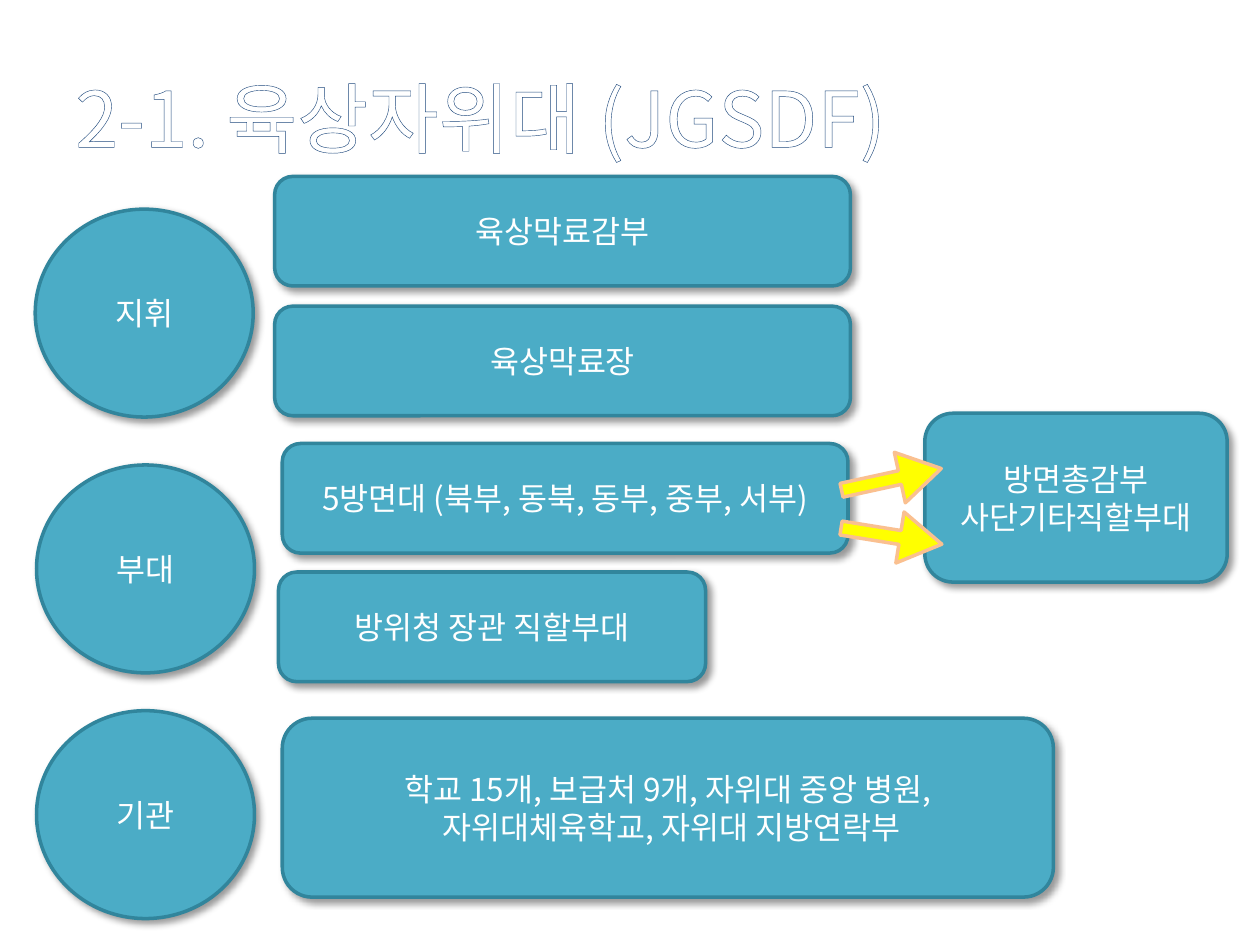
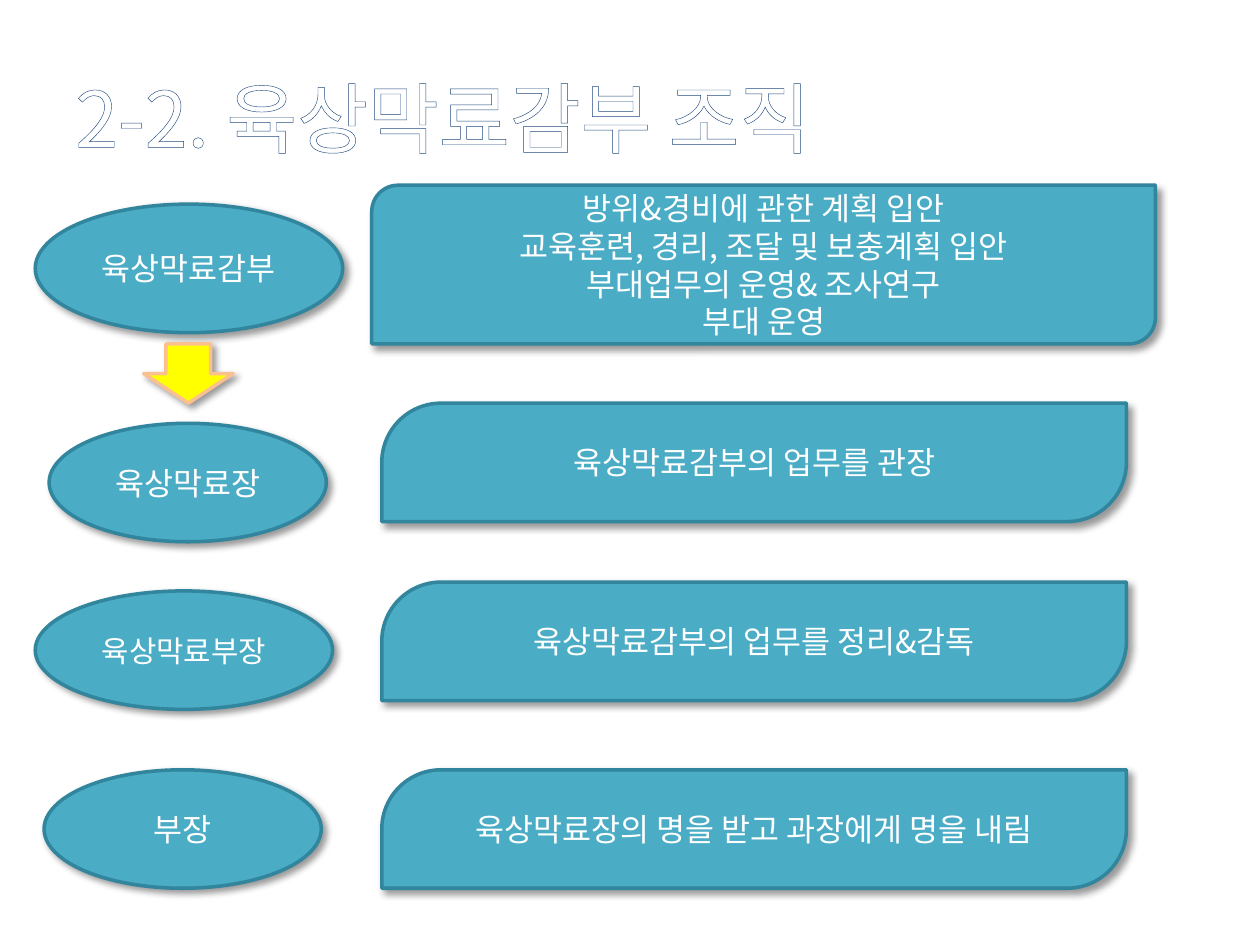
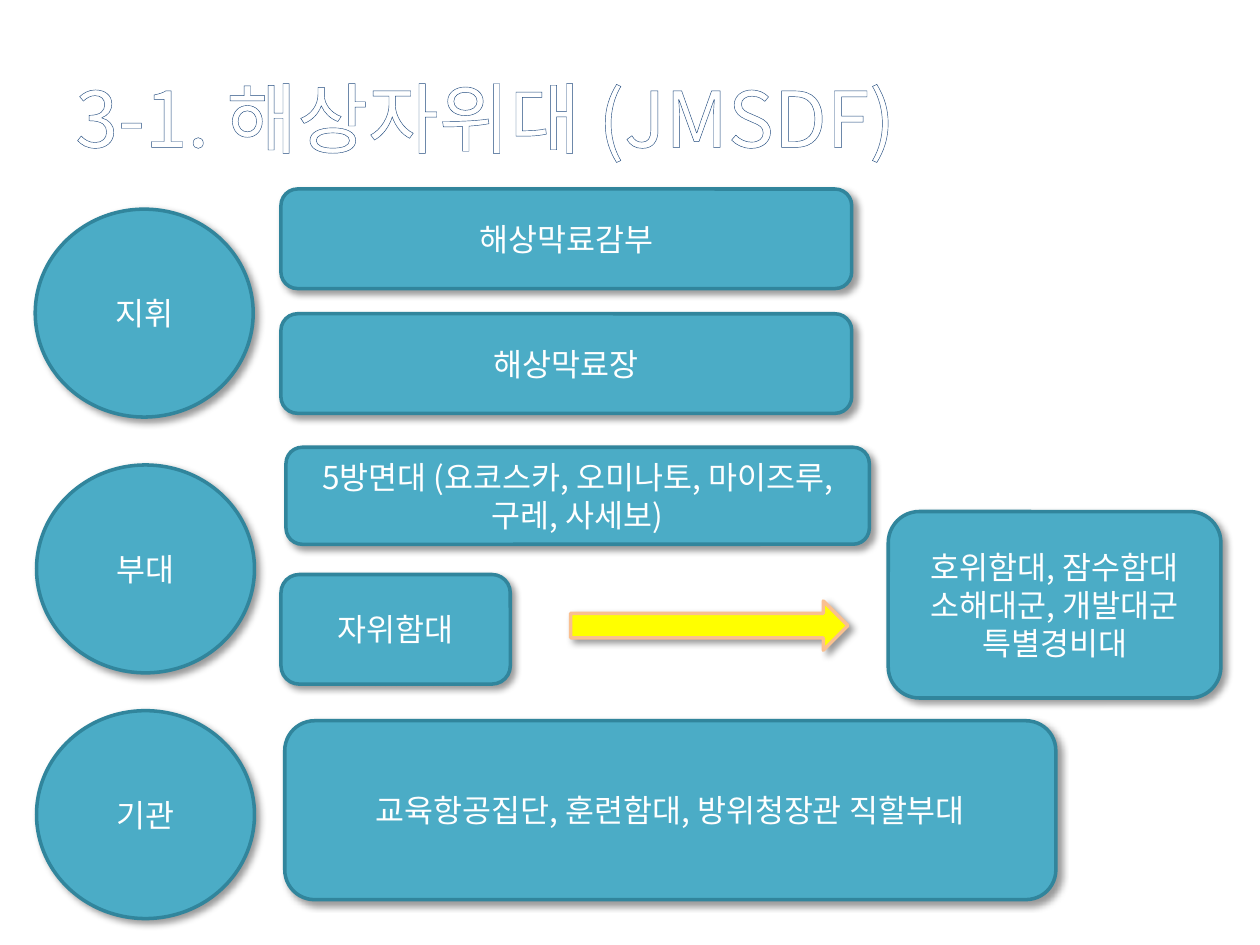
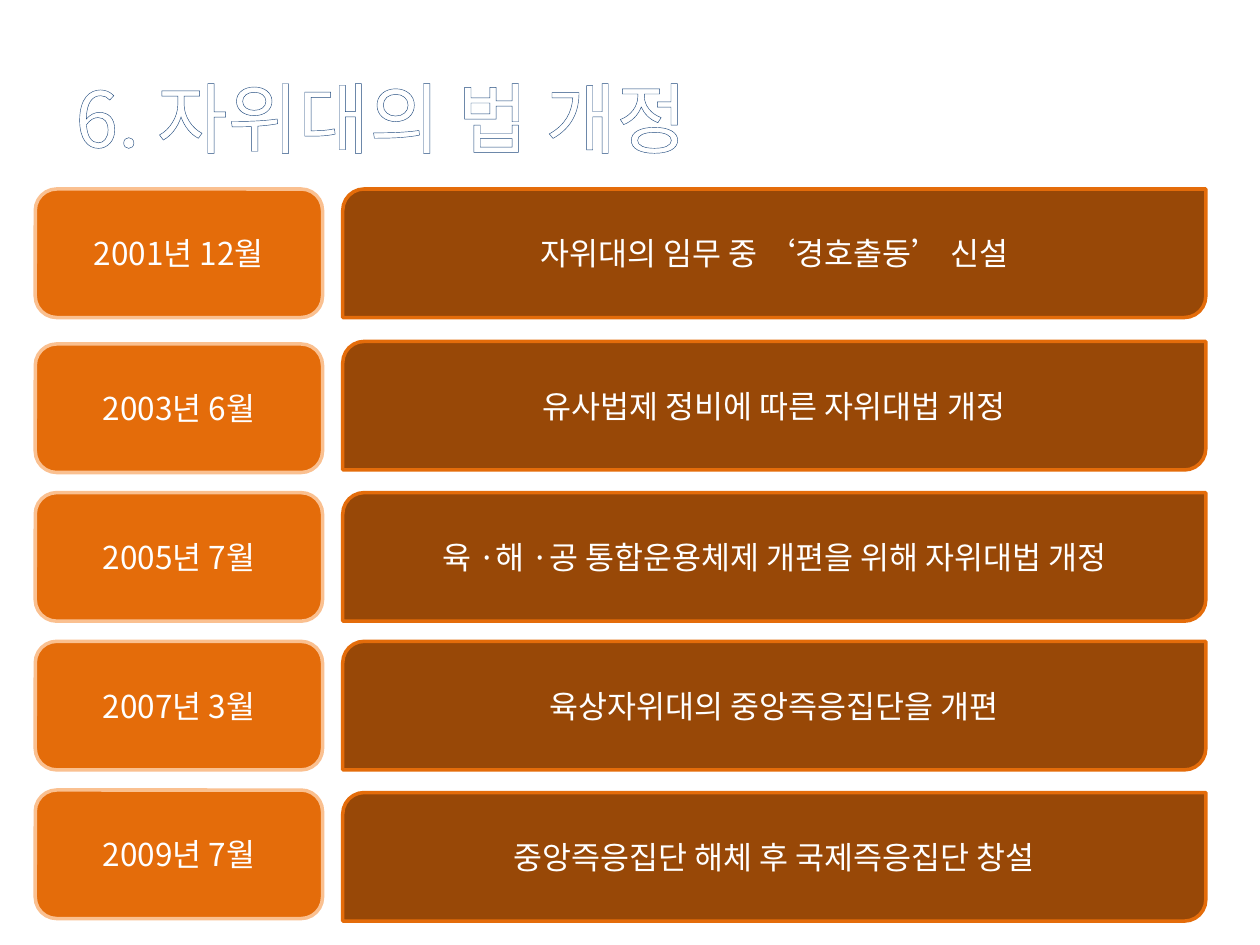
"""Build four slides on the structure and law of the self-defence forces."""
from lxml.etree import SubElement
from pptx import Presentation
from pptx.dml.color import RGBColor
from pptx.enum.shapes import MSO_SHAPE
from pptx.enum.text import MSO_ANCHOR, PP_ALIGN
from pptx.oxml.ns import qn
from pptx.util import Inches, Pt

THEME = {
    "font": "Noto Sans CJK KR",
    "white": "FFFFFF",
    "edge": "1F497D",
    "head": 44,
    "body": 18,
    "small": 17,
    "looks": {
        "teal": {"fill": "4BACC6", "line": "31859C", "shade": True},
        "sun": {"fill": "FFFF00", "line": "FAC090", "shade": True},
        "flat": {"fill": "FFFF00", "line": "FAC090", "shade": False},
        "date": {"fill": "E46C0A", "line": "FAC090", "shade": False},
        "law": {"fill": "984807", "line": "E46C0A", "shade": False},
    },
}
OVAL, ROUND, LEAF = MSO_SHAPE.OVAL, MSO_SHAPE.ROUNDED_RECTANGLE, MSO_SHAPE.ROUND_2_DIAG_RECTANGLE
RIGHT, DOWN = MSO_SHAPE.RIGHT_ARROW, MSO_SHAPE.DOWN_ARROW

deck = Presentation()
deck.slide_width, deck.slide_height = Inches(10), Inches(7.5)
COL, ROW = deck.slide_width / 100, deck.slide_height / 75


def write(shape, text, size, align):
    """Fill the frame of a shape, one paragraph a line."""
    frame = shape.text_frame
    for name, value in {"word_wrap": True, "vertical_anchor": MSO_ANCHOR.MIDDLE, "text": text}.items():
        setattr(frame, name, value)
    for para in frame.paragraphs:
        para.alignment = align
        for run in para.runs:
            for name, value in {"size": Pt(size), "name": THEME["font"]}.items():
                setattr(run.font, name, value)
            run.font.color.rgb = RGBColor.from_string(THEME["white"])
            SubElement(run.font._element, qn("a:ea"), typeface=THEME["font"])


def draw(slide, kind, look, box, text="", size=THEME["body"], turn=0, bend=()):
    """Place a preset shape, its box given in columns and rows."""
    left, top, wide, high = box
    shape = slide.shapes.add_shape(
        kind, round(left * COL), round(top * ROW), round(wide * COL), round(high * ROW))
    style = THEME["looks"][look]
    shape.fill.solid()
    shape.fill.fore_color.rgb = RGBColor.from_string(style["fill"])
    shape.line.color.rgb = RGBColor.from_string(style["line"])
    shape.line.width = Pt(2)
    shape.rotation = turn
    for spot, value in enumerate(bend):
        shape.adjustments[spot] = value
    shape.shadow.inherit = False
    if style["shade"]:
        glow = SubElement(
            shape._element.spPr.find(qn("a:effectLst")), qn("a:outerShdw"),
            blurRad=str(Pt(4)), dist=str(Pt(3)), dir="2700000", algn="tl", rotWithShape="0")
        tint = SubElement(glow, qn("a:srgbClr"), val="000000")
        SubElement(tint, qn("a:alpha"), val="40000")
    if text:
        write(shape, text, size, PP_ALIGN.CENTER)


slides = []
for title in ("2-1. 육상자위대 (JGSDF)", "2-2. 육상막료감부 조직",
              "3-1. 해상자위대 (JMSDF)", "6. 자위대의 법 개정"):
    slide = deck.slides.add_slide(deck.slide_layouts[6])
    head = slide.shapes.add_textbox(round(5 * COL), round(3 * ROW), round(90 * COL), round(12.5 * ROW))
    write(head, title, THEME["head"], PP_ALIGN.LEFT)
    props = head.text_frame.paragraphs[0].runs[0].font._element
    edge = SubElement(props, qn("a:ln"), w=str(Pt(1.45)))
    SubElement(SubElement(edge, qn("a:solidFill")), qn("a:srgbClr"), val=THEME["edge"])
    props.insert(0, edge)
    slides.append(slide)
land, staff, sea, laws = slides

for slide in (land, sea):
    for left, top, text in ((2.8, 16.6, "지휘"), (2.9, 36.9, "부대"), (2.9, 56.4, "기관")):
        draw(slide, OVAL, "teal", (left, top, 17.3, 16.5), text)

for slide, box, text in (
    (land, (21.8, 14, 45.7, 8.7), "육상막료감부"),
    (land, (21.8, 24.3, 45.7, 8.7), "육상막료장"),
    (land, (22.4, 35.2, 44.9, 8.7), "5방면대 (북부, 동북, 동부, 중부, 서부)"),
    (land, (22.1, 45.4, 33.9, 8.7), "방위청 장관 직할부대"),
    (land, (73.4, 32.8, 24, 13.4), "방면총감부\n사단기타직할부대"),
    (land, (22.4, 57, 61.2, 14.2), "학교 15개, 보급처 9개, 자위대 중앙 병원,\n 자위대체육학교, 자위대 지방연락부"),
    (sea, (22.3, 15, 45.3, 7.9), "해상막료감부"),
    (sea, (22.3, 24.9, 45.3, 7.9), "해상막료장"),
    (sea, (22.7, 35.5, 46.3, 7.7), "5방면대 (요코스카, 오미나토, 마이즈루, 구레, 사세보)"),
    (sea, (22.3, 45.6, 18.2, 8.7), "자위함대"),
    (sea, (70.5, 40.6, 26.4, 14.8), "호위함대, 잠수함대\n소해대군, 개발대군\n특별경비대"),
    (sea, (22.6, 57.2, 61.2, 14.2), "교육항공집단, 훈련함대, 방위청장관 직할부대"),
):
    draw(slide, ROUND, "teal", box, text)

for top, turn in ((36, 347.7), (40.5, 9.1)):
    draw(land, RIGHT, "flat", (66.7, top, 8.1, 4.1), turn=turn, bend=(0.27, 0.82))
draw(sea, RIGHT, "sun", (45.3, 47.7, 22, 3.9))

for box, text, size in (
    ((2.8, 16.2, 24.4, 10.2), "육상막료감부", THEME["body"]),
    ((3.9, 33.6, 22, 9.4), "육상막료장", THEME["body"]),
    ((2.8, 46.9, 23.6, 9.4), "육상막료부장", THEME["small"]),
    ((3.5, 61.1, 22, 9.4), "부장", THEME["body"]),
):
    draw(staff, OVAL, "teal", box, text, size)
draw(staff, DOWN, "sun", (11.4, 27.3, 7.1, 4.7))
draw(staff, LEAF, "teal", (29.5, 14.7, 62.2, 12.6),
     "방위&경비에 관한 계획 입안\n교육훈련, 경리, 조달 및 보충계획 입안\n부대업무의 운영& 조사연구\n부대 운영")
for top, text in ((32, "육상막료감부의 업무를 관장"),
                  (46.2, "육상막료감부의 업무를 정리&감독"),
                  (61.1, "육상막료장의 명을 받고 과장에게 명을 내림")):
    draw(staff, LEAF, "teal", (30.3, top, 59.1, 9.4), text, bend=(0.5, 0))

for near, far, date, text in (
    (15, 15, "2001년 12월", "자위대의 임무 중 ‘경호출동’ 신설"),
    (27.3, 27.1, "2003년 6월", "유사법제 정비에 따른 자위대법 개정"),
    (39.1, 39.1, "2005년 7월", "육 ·해 ·공 통합운용체제 개편을 위해 자위대법 개정"),
    (50.9, 50.9, "2007년 3월", "육상자위대의 중앙즉응집단을 개편"),
    (62.7, 62.9, "2009년 7월", "중앙즉응집단 해체 후 국제즉응집단 창설"),
):
    draw(laws, ROUND, "date", (2.8, near, 22.8, 10.2), date)
    draw(laws, LEAF, "law", (27.2, far, 68.5, 10.2), text)

deck.save("out.pptx")
